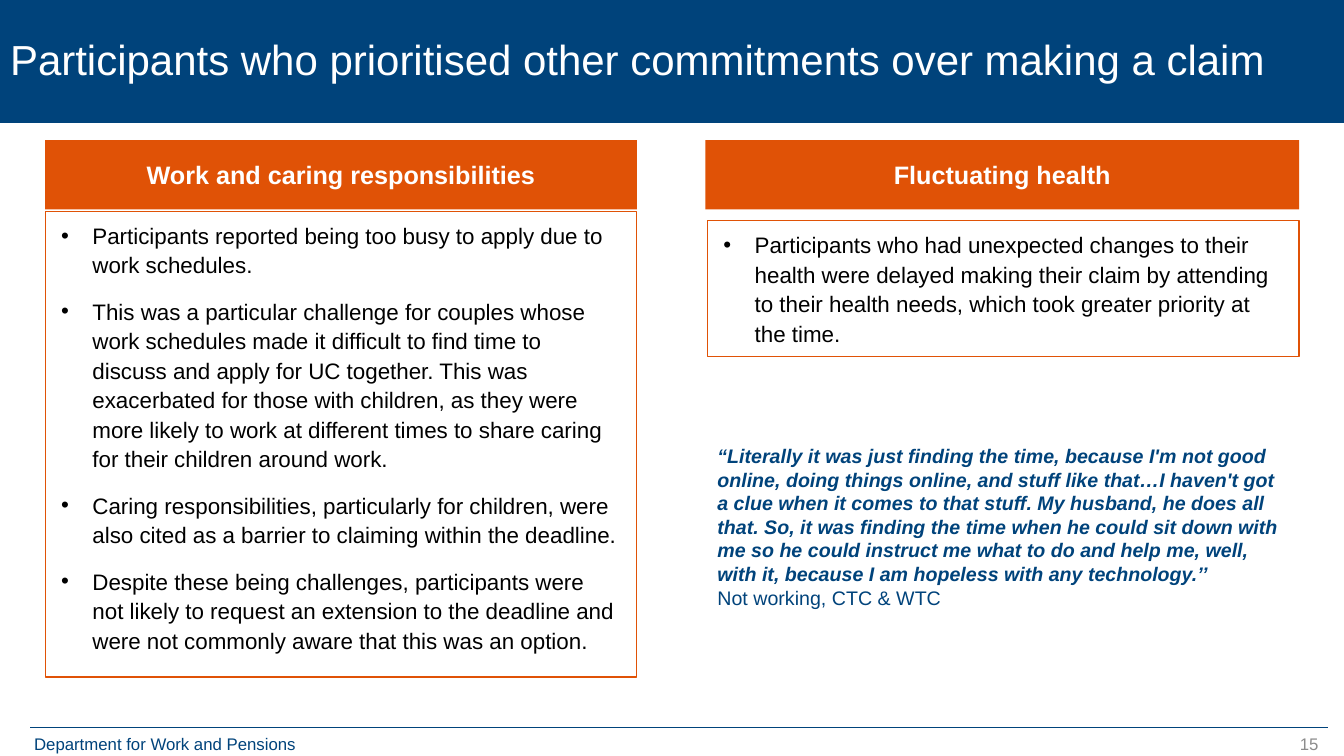
import pptx
import pptx.util
import pptx.dml.color
import pptx.enum.shapes
import pptx.enum.text
import pptx.oxml
import pptx.oxml.ns
from pptx.util import Cm

COLOURS = {
    "navy": "00437B",
    "orange": "E05206",
    "white": "FFFFFF",
    "black": "000000",
    "grey": "8C8C8C",
}
ALIGN = pptx.enum.text.PP_ALIGN
MIDDLE = pptx.enum.text.MSO_ANCHOR.MIDDLE
TOP = pptx.enum.text.MSO_ANCHOR.TOP
PANEL_FRAME = {"margin_left": Cm(0.4), "margin_right": Cm(0.4),
               "margin_top": Cm(0.2), "margin_bottom": Cm(0.2),
               "vertical_anchor": TOP, "word_wrap": True}

HEADING_TOP, HEADING_HEIGHT = Cm(3.53), Cm(1.75)
PANEL_WIDTH = Cm(14.91)
LEFT_COLUMN, RIGHT_COLUMN = Cm(1.14), Cm(17.83)

WORK_AND_CARING = [
    "Participants reported being too busy to apply due to work schedules.",
    "This was a particular challenge for couples whose work schedules made it difficult "
    "to find time to discuss and apply for UC together. This was exacerbated for those "
    "with children, as they were more likely to work at different times to share caring "
    "for their children around work.",
    "Caring responsibilities, particularly for children, were also cited as a barrier to "
    "claiming within the deadline.",
    "Despite these being challenges, participants were not likely to request an extension "
    "to the deadline and were not commonly aware that this was an option.",
]
FLUCTUATING_HEALTH = [
    "Participants who had unexpected changes to their health were delayed making their "
    "claim by attending to their health needs, which took greater priority at the time.",
]
QUOTE = (
    "“Literally it was just finding the time, because I'm not good online, doing things "
    "online, and stuff like that…I haven't got a clue when it comes to that stuff. My "
    "husband, he does all that. So, it was finding the time when he could sit down with me "
    "so he could instruct me what to do and help me, well, with it, because I am hopeless "
    "with any technology.’’"
)


def rgb(colour):
    return pptx.dml.color.RGBColor.from_string(COLOURS[colour])


def set_attributes(target, values):
    for name, value in values.items():
        setattr(target, name, value)


def write(paragraph, text, size, colour, layout=None, **font_format):
    """Put one formatted run into a paragraph; layout holds paragraph attributes."""
    set_attributes(paragraph, layout or {})
    run = paragraph.add_run()
    run.text = text
    set_attributes(run.font, {"name": "Arial", "size": pptx.util.Pt(size), **font_format})
    run.font.color.rgb = rgb(colour)


def paragraphs(frame, count):
    """Return the frame's paragraphs after extending them to count."""
    while len(frame.paragraphs) < count:
        frame.add_paragraph()
    return frame.paragraphs


def add_bullet(paragraph):
    properties = paragraph._p.get_or_add_pPr()
    properties.set("marL", str(Cm(0.79)))
    properties.set("indent", str(-Cm(0.79)))
    namespace = pptx.oxml.ns.nsdecls("a")
    for markup in ('<a:buFont {} typeface="Arial"/>', '<a:buChar {} char="•"/>'):
        properties.append(pptx.oxml.parse_xml(markup.format(namespace)))


def add_title(slide, text, width):
    title = slide.shapes.title
    set_attributes(title, {"left": 0, "top": 0, "width": width, "height": Cm(3.1)})
    title.fill.solid()
    title.fill.fore_color.rgb = rgb("navy")
    set_attributes(title.text_frame, {
        "vertical_anchor": MIDDLE, "word_wrap": True,
        "auto_size": pptx.enum.text.MSO_AUTO_SIZE.NONE})
    write(title.text_frame.paragraphs[0], text, 30, "white",
          {"alignment": ALIGN.LEFT, "line_spacing": 0.9})


def add_rectangle(slide, left, top, width, height, fill, outline=None):
    rectangle = slide.shapes.add_shape(
        pptx.enum.shapes.MSO_SHAPE.RECTANGLE, left, top, width, height)
    rectangle.shadow.inherit = False
    rectangle.fill.solid()
    rectangle.fill.fore_color.rgb = rgb(fill)
    if outline:
        rectangle.line.color.rgb = rgb(outline)
        rectangle.line.width = pptx.util.Pt(1)
    else:
        rectangle.line.fill.background()
    return rectangle.text_frame


def add_heading(slide, text, left, width):
    frame = add_rectangle(slide, left, HEADING_TOP, width, HEADING_HEIGHT, "orange")
    set_attributes(frame, {"vertical_anchor": MIDDLE, "word_wrap": True})
    write(frame.paragraphs[0], text, 18, "white", {"alignment": ALIGN.CENTER}, bold=True)


def add_bullet_panel(slide, points, left, top, height, space_before):
    frame = add_rectangle(slide, left, top, PANEL_WIDTH, height, "white", "orange")
    set_attributes(frame, PANEL_FRAME)
    layout = {"alignment": ALIGN.LEFT, "line_spacing": 1.1,
              "space_before": pptx.util.Pt(space_before)}
    for paragraph, point in zip(paragraphs(frame, len(points)), points):
        write(paragraph, point, 16, "black", layout)
        add_bullet(paragraph)


def add_text_frame(slide, left, top, width, height):
    frame = slide.shapes.add_textbox(left, top, width, height).text_frame
    frame.word_wrap = True
    return frame


def add_quote(slide, quote, speaker):
    frame = add_text_frame(slide, RIGHT_COLUMN, Cm(11.07), PANEL_WIDTH, Cm(4.45))
    words, source = paragraphs(frame, 2)
    write(words, quote, 14, "navy", bold=True, italic=True)
    write(source, speaker, 14, "navy")


def add_footer(slide, department, number):
    rule = slide.shapes.add_connector(
        pptx.enum.shapes.MSO_CONNECTOR.STRAIGHT, Cm(0.76), Cm(18.34), Cm(33.48), Cm(18.34))
    rule.line.color.rgb = rgb("navy")
    rule.line.width = pptx.util.Pt(0.5)
    rule._element.spPr.append(
        pptx.oxml.parse_xml("<a:effectLst {}/>".format(pptx.oxml.ns.nsdecls("a"))))
    for text, left, width, colour, alignment in (
            (department, Cm(0.61), Cm(8.2), "navy", ALIGN.JUSTIFY),
            (number, Cm(25.86), Cm(7.62), "grey", ALIGN.RIGHT)):
        frame = add_text_frame(slide, left, Cm(18.36), width, Cm(0.77))
        write(frame.paragraphs[0], text, 12, colour, {"alignment": alignment})


def main():
    deck = pptx.Presentation()
    set_attributes(deck, {"slide_width": Cm(33.87), "slide_height": Cm(19.05)})
    slide = deck.slides.add_slide(deck.slide_layouts.get_by_name("Title Only"))

    add_footer(slide, "Department for Work and Pensions", "15")
    add_title(slide, "Participants who prioritised other commitments over making a claim",
              deck.slide_width)
    add_heading(slide, "Work and caring responsibilities", LEFT_COLUMN, PANEL_WIDTH)
    add_bullet_panel(slide, WORK_AND_CARING, LEFT_COLUMN, Cm(5.33), Cm(11.73), 12)
    add_heading(slide, "Fluctuating health", Cm(17.78), Cm(14.96))
    add_bullet_panel(slide, FLUCTUATING_HEALTH, RIGHT_COLUMN, Cm(5.56), Cm(3.43), 24)
    add_quote(slide, QUOTE, "Not working, CTC & WTC")

    deck.save("out.pptx")


if __name__ == "__main__":
    main()
